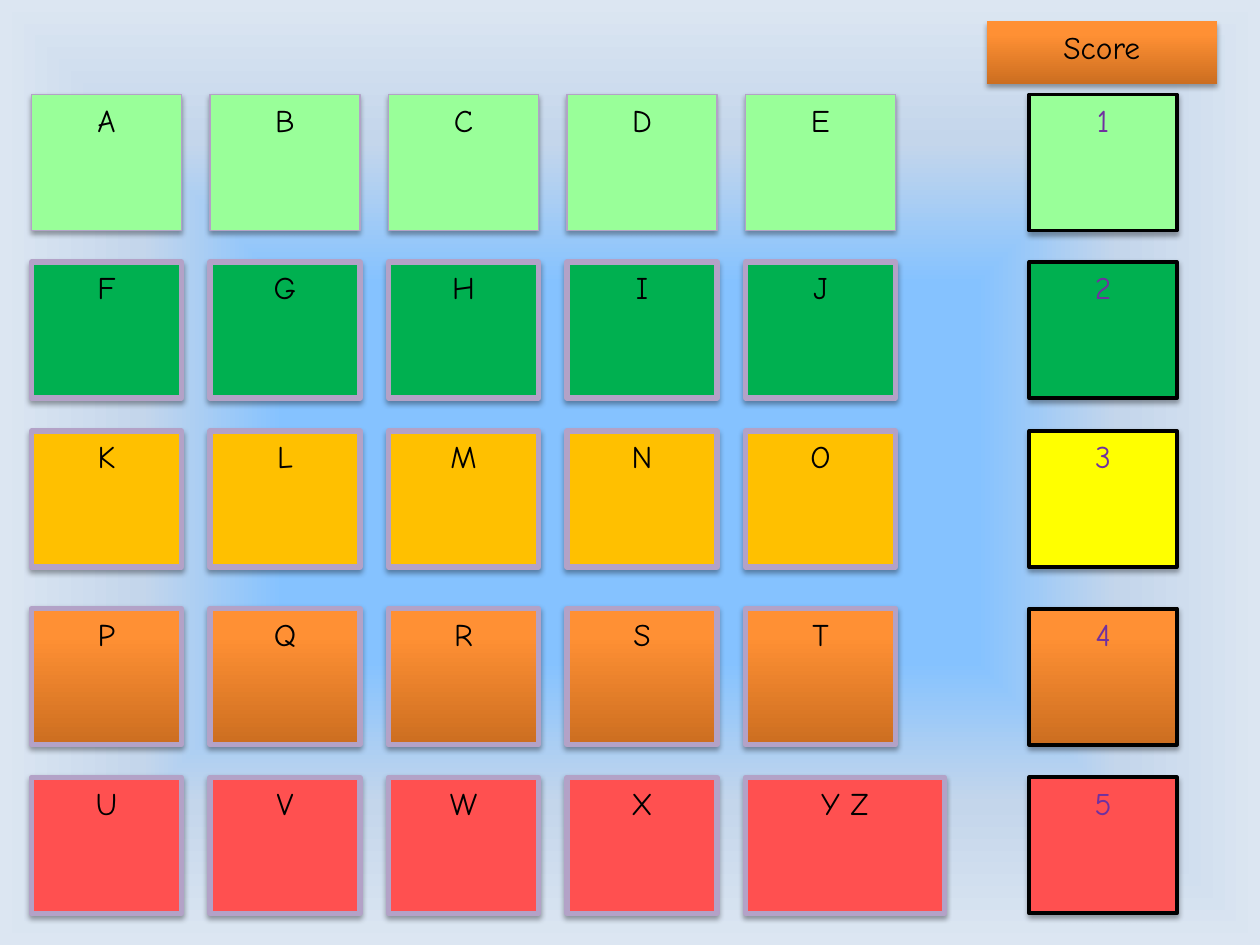
from typing import NamedTuple

from lxml.etree import SubElement
from pptx import Presentation
from pptx.dml.color import RGBColor
from pptx.enum.shapes import MSO_SHAPE
from pptx.enum.text import MSO_ANCHOR, PP_ALIGN
from pptx.oxml.ns import qn
from pptx.util import Inches, Pt

FONT = "Comic Neue"
BLACK = "000000"
LILAC = "B3A2C7"
PURPLE = "7030A0"
ORANGE = [(0, "CC6E20"), (80, "FF9034"), (100, "FF9136")]
SKY = [(40, "85C2FF"), (70, "C4D6EB"), (100, "DCE6F2"), (100, "FFEBFA")]
PITCH = 17 / 12
HIGH = 1.08


class Band(NamedTuple):
    top: float
    words: list[str]
    fill: str | list
    score: str | list
    edge: float = 3


class Card(NamedTuple):
    left: float
    top: float
    width: float
    height: float
    text: str
    fill: str | list
    ink: str = BLACK
    line: str | None = None
    edge: float = 0


BANDS = [
    Band(0.75, list("ABCDE"), "99FF99", "99FF99", 0.75),
    Band(2.08, list("FGHIJ"), "00B050", "00B050"),
    Band(3.42, list("KLMNO"), "FFC000", "FFFF00"),
    Band(4.83, list("PQRST"), ORANGE, ORANGE),
    Band(6.17, ["U", "V", "W", "X", "Y Z"], "FF5050", "FF5050"),
]


def color(code: str) -> RGBColor:
    return RGBColor.from_string(code)


def blend(root, stops: list):
    grad = next(root.iter(qn("a:gradFill")))
    grad.clear()
    grad.set("rotWithShape", "1")
    group = SubElement(grad, qn("a:gsLst"))
    for place, code in stops:
        stop = SubElement(group, qn("a:gs"), pos=str(place * 1000))
        SubElement(stop, qn("a:srgbClr"), val=code)
    return grad


def shade(shape) -> None:
    shape.shadow.inherit = False
    effects = shape.element.spPr.find(qn("a:effectLst"))
    outer = SubElement(
        effects, qn("a:outerShdw"), blurRad=str(Pt(3.1)), dist=str(Pt(1.8)),
        dir="5400000", rotWithShape="0",
    )
    tint = SubElement(outer, qn("a:srgbClr"), val=BLACK)
    SubElement(tint, qn("a:alpha"), val="35000")


def draw(slide, card: Card) -> None:
    box = map(Inches, (card.left, card.top, card.width, card.height))
    shape = slide.shapes.add_shape(MSO_SHAPE.RECTANGLE, *box)
    if isinstance(card.fill, str):
        shape.fill.solid()
        shape.fill.fore_color.rgb = color(card.fill)
    else:
        shape.fill.gradient()
        grad = blend(shape.element.spPr, card.fill)
        SubElement(grad, qn("a:lin"), ang="16200000", scaled="0")
    if card.line:
        shape.line.color.rgb = color(card.line)
        shape.line.width = Pt(card.edge)
    else:
        shape.line.fill.background()
    shade(shape)
    frame = shape.text_frame
    frame.word_wrap = False
    frame.vertical_anchor = MSO_ANCHOR.TOP
    para = frame.paragraphs[0]
    para.text = card.text
    para.alignment = PP_ALIGN.CENTER
    para.font.name = FONT
    para.font.size = Pt(18)
    para.font.color.rgb = color(card.ink)


def backdrop(slide) -> None:
    slide.background.fill.gradient()
    grad = blend(slide.element, SKY)
    route = SubElement(grad, qn("a:path"), {"path": "shape"})
    SubElement(route, qn("a:fillToRect"), l="50000", t="50000", r="50000", b="50000")


def main() -> None:
    deck = Presentation()
    deck.slide_width, deck.slide_height = Inches(10), Inches(7.5)
    slide = deck.slides.add_slide(deck.slide_layouts[6])
    backdrop(slide)
    for rank, band in enumerate(BANDS, 1):
        for col, word in enumerate(band.words):
            left = 0.25 + col * PITCH
            width = 1.19 if len(word) == 1 else 1.58
            draw(slide, Card(left, band.top, width, HIGH, word, band.fill,
                             line=LILAC, edge=band.edge))
        draw(slide, Card(8.17, band.top, 1.17, HIGH, str(rank), band.score,
                         PURPLE, BLACK, 2.25))
    draw(slide, Card(7.83, 0.17, 1.83, 0.5, "Score", ORANGE))
    deck.save("out.pptx")


if __name__ == "__main__":
    main()
